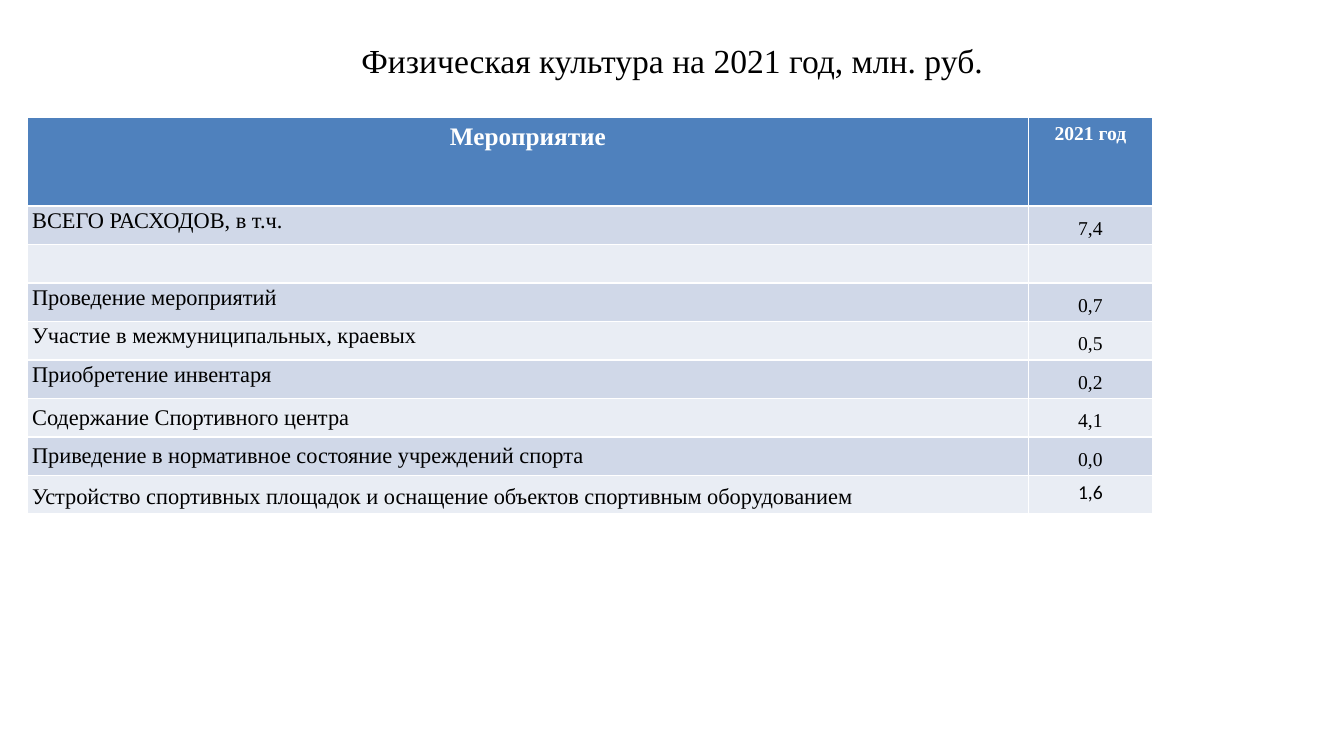
from dataclasses import dataclass

from pptx import Presentation
from pptx.dml.color import RGBColor
from pptx.enum.text import MSO_ANCHOR, PP_ALIGN
from pptx.util import Cm, Pt

TOP, MID = MSO_ANCHOR.TOP, MSO_ANCHOR.MIDDLE
LEFT, MIDST = PP_ALIGN.LEFT, PP_ALIGN.CENTER


@dataclass(frozen=True)
class Theme:
    """Colours, fonts and type sizes of the slide."""
    ink: str = "000000"
    paper: str = "FFFFFF"
    head: str = "4F81BD"
    bands: tuple = ("D0D8E8", "E9EDF4")
    serif: str = "Times New Roman"
    sans: str = "Calibri"
    title: int = 24
    lead: int = 18
    body: int = 16
    small: int = 14


LOOK = Theme()
HEADS = (("Мероприятие", LOOK.lead), ("2021 год", LOOK.small))
COSTS = (
    ("ВСЕГО РАСХОДОВ, в т.ч.", "7,4"),
    ("", ""),
    ("Проведение мероприятий", "0,7"),
    ("Участие в межмуниципальных, краевых", "0,5"),
    ("Приобретение инвентаря", "0,2"),
    ("Содержание Спортивного центра", "4,1"),
    ("Приведение в нормативное состояние учреждений спорта", "0,0"),
    ("Устройство спортивных площадок и оснащение объектов "
     "спортивным оборудованием", "1,6"),
)
TIGHT = 5


def write(frame, text, size, align=LEFT, color=LOOK.ink, font=LOOK.serif,
          bold=False, line=None):
    """Put one styled paragraph into a text frame."""
    frame.text = text
    para = frame.paragraphs[0]
    para.alignment = align
    if line:
        para.line_spacing = Pt(line)
    for run in para.runs:
        run.font.size = Pt(size)
        run.font.name = font
        run.font.bold = bold
        run.font.color.rgb = RGBColor.from_string(color)


def paint(cell, color):
    """Fill a cell with a plain colour."""
    cell.fill.solid()
    cell.fill.fore_color.rgb = RGBColor.from_string(color)


def inset(cell, top=0):
    """Set narrow cell margins with a chosen top gap."""
    cell.margin_left = cell.margin_right = Cm(0.12)
    cell.margin_top, cell.margin_bottom = top, 0


def add_title(slide, x, y, w, h):
    """Place the centred heading in its box."""
    frame = slide.shapes.add_textbox(x, y, w, h).text_frame
    frame.word_wrap = True
    frame.vertical_anchor = MID
    write(frame, "Физическая культура на 2021 год, млн. руб.",
          LOOK.title, MIDST)


def add_costs(slide, x, y, w, h):
    """Place the table of costs in its box."""
    table = slide.shapes.add_table(len(COSTS) + 1, 2, x, y, w, h).table
    side, top = Cm(3.12), Cm(2.22)
    table.columns[0].width, table.columns[1].width = w - side, side
    table.rows[0].height = top
    for col, (text, size) in enumerate(HEADS):
        cell = table.cell(0, col)
        paint(cell, LOOK.head)
        write(cell.text_frame, text, size, MIDST, LOOK.paper, bold=True)
    last = len(COSTS)
    for row, (name, cost) in enumerate(COSTS, 1):
        table.rows[row].height = (h - top) // last
        left, right = table.cell(row, 0), table.cell(row, 1)
        for cell in (left, right):
            paint(cell, LOOK.bands[(row - 1) % 2])
        end = row == last
        inset(left, Pt(12) if end else 0)
        left.vertical_anchor = TOP if end else MID
        line = 12 if end else 11 if row <= TIGHT else None
        write(left.text_frame, name, LOOK.body, line=line)
        if end:
            write(right.text_frame, cost, LOOK.small, MIDST, font=LOOK.sans)
        else:
            inset(right, Pt(12) if cost else 0)
            write(right.text_frame, cost, LOOK.small, MIDST, line=12)


def main():
    """Build the slide and save it."""
    deck = Presentation()
    deck.slide_width, deck.slide_height = Cm(33.87), Cm(19.05)
    slide = deck.slides.add_slide(deck.slide_layouts[6])
    add_title(slide, Cm(1.7), Cm(0.76), Cm(30.48), Cm(1.52))
    add_costs(slide, Cm(0.69), Cm(2.97), Cm(28.35), Cm(9.98))
    deck.save("out.pptx")


if __name__ == "__main__":
    main()
